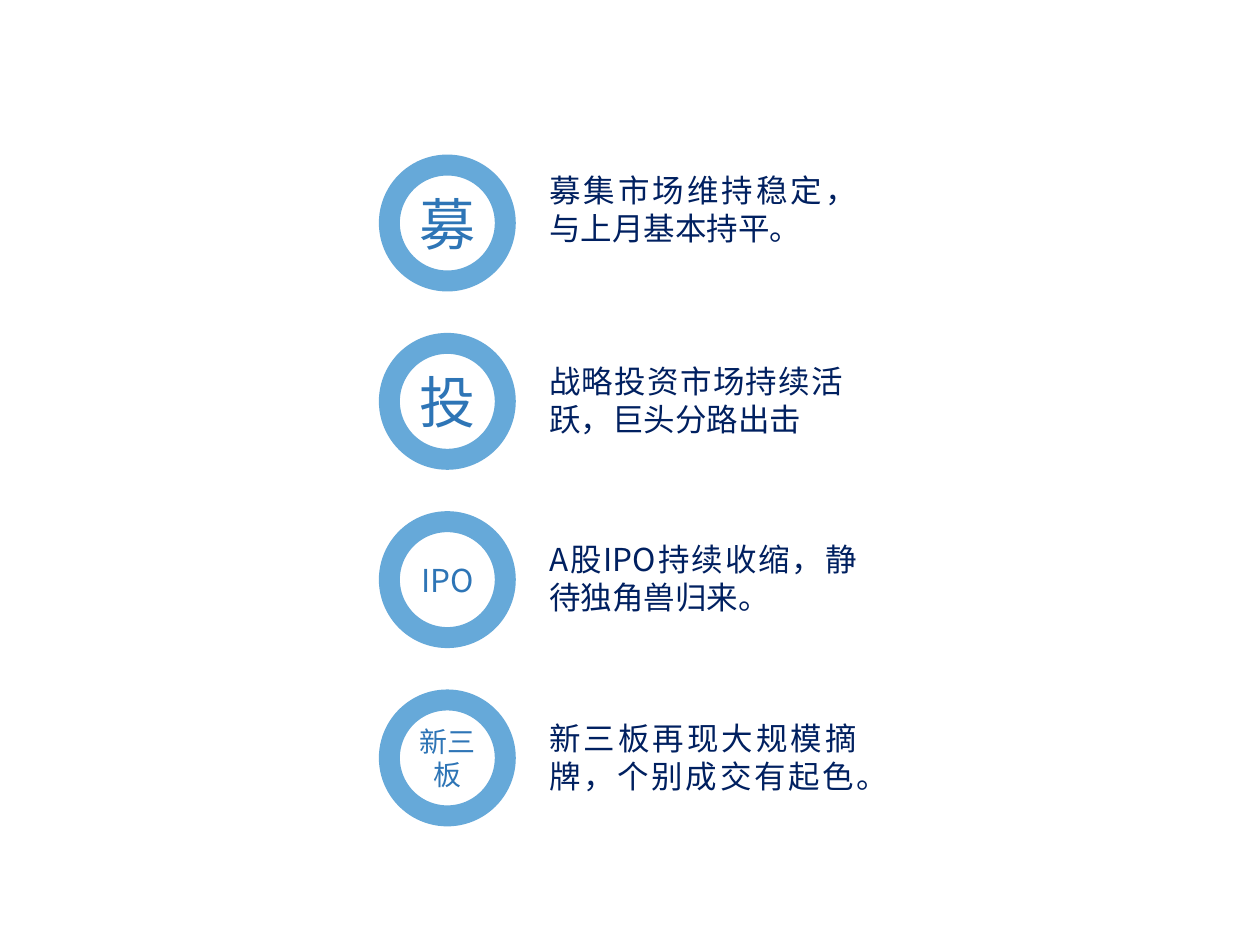
from lxml import etree
from pptx import Presentation
from pptx.dml.color import RGBColor
from pptx.enum.lang import MSO_LANGUAGE_ID
from pptx.enum.shapes import MSO_SHAPE
from pptx.enum.text import MSO_ANCHOR, PP_ALIGN
from pptx.oxml.ns import qn
from pptx.util import Inches, Pt

OVAL = MSO_SHAPE.OVAL
CENTER, JUSTIFY = PP_ALIGN.CENTER, PP_ALIGN.JUSTIFY
TOP, MIDDLE = MSO_ANCHOR.TOP, MSO_ANCHOR.MIDDLE
CHINESE = MSO_LANGUAGE_ID.SIMPLIFIED_CHINESE


def rgb(value):
    return RGBColor.from_string(value)


def write(shape, text, size=18, font="Noto Sans CJK SC", color="002060",
          align=JUSTIFY, anchor=TOP):
    frame = shape.text_frame
    frame.word_wrap = True
    frame.vertical_anchor = anchor
    paragraph = frame.paragraphs[0]
    paragraph.alignment = align
    run = paragraph.add_run()
    run.text = text
    run.font.size = Pt(size)
    run.font.name = font
    run.font.color.rgb = rgb(color)
    run.font.language_id = CHINESE
    east_asian = etree.SubElement(run.font._element, qn("a:ea"))
    east_asian.set("typeface", font)


presentation = Presentation()
presentation.slide_width = Inches(10)
presentation.slide_height = Inches(7.5)
slide = presentation.slides.add_slide(presentation.slide_layouts[6])

# ring label, label size, summary, summary width, summary offset below ring top
topics = [
    ("募", 32, "募集市场维持稳定，与上月基本持平。", 2.64, 0),
    ("投", 32, "战略投资市场持续活跃，巨头分路出击", 2.53, 0.1),
    ("IPO", 18, "A股IPO持续收缩，静待独角兽归来。", 2.64, 0.1),
    ("新三板", 16, "新三板再现大规模摘牌，个别成交有起色。", 2.64, 0.1),
]
first_top, row_step, ring_size = 1.31, 1.415, 0.92

for row, (label, label_size, summary, width, offset) in enumerate(topics):
    top = first_top + row * row_step

    ring = slide.shapes.add_shape(OVAL, Inches(3.09), Inches(top),
                                  Inches(ring_size), Inches(ring_size))
    ring.shadow.inherit = False
    ring.fill.background()
    ring.line.color.rgb = rgb("0070C0")
    ring.line.width = Pt(12)
    line_color = ring.line._ln.find(".//" + qn("a:srgbClr"))
    etree.SubElement(line_color, qn("a:alpha")).set("val", "60000")
    write(ring, label, size=label_size, font="Noto Sans CJK JP",
          color="2E75B6", align=CENTER, anchor=MIDDLE)

    summary_box = slide.shapes.add_textbox(Inches(4.26), Inches(top + offset),
                                           Inches(width), Inches(0.71))
    write(summary_box, summary)

presentation.save("out.pptx")
